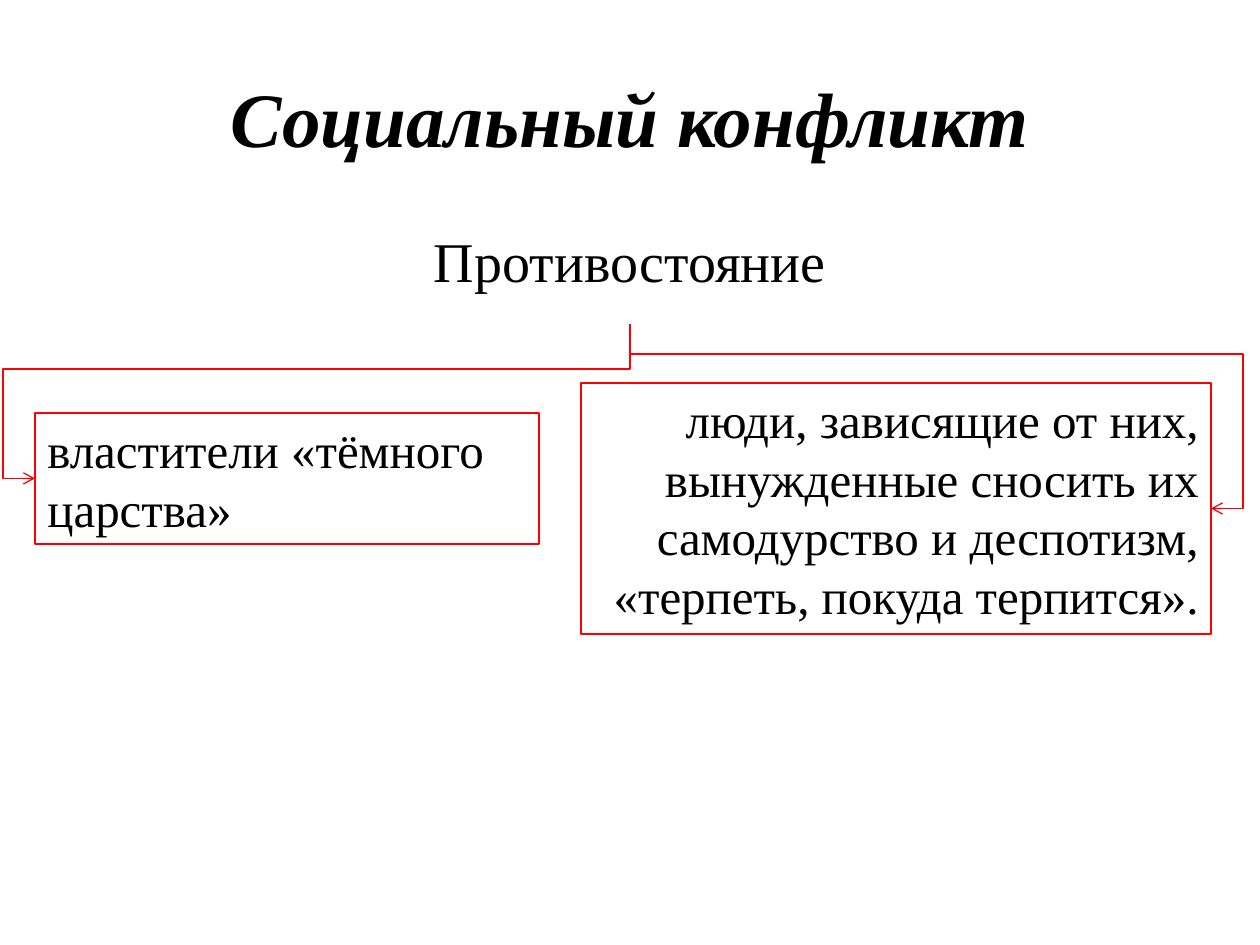
"""Builds a slide on social conflict with two opposed sides."""
from lxml import etree
from pptx import Presentation, util as u
from pptx.dml.color import RGBColor
from pptx.enum import shapes, text
from pptx.oxml.ns import qn

PX = 914400 // 126
FONT = "Times New Roman"
HUES = {"ink": "000000", "edge": "FF0000"}
LEFT, MID, RIGHT = text.PP_ALIGN.LEFT, text.PP_ALIGN.CENTER, text.PP_ALIGN.RIGHT

TITLE = ("Социальный конфликт", (63, 38, 1134, 158), 44, MID)
TOPIC = ("Противостояние", (63, 220, 1134, 104), 32, MID)
SIDES = [
    {"box": ("властители «тёмного царства»", (35, 413, 504, 131), 28, LEFT),
     "site": 1, "drop": 45},
    {"box": ("люди, зависящие от них, вынужденные сносить их самодурство и "
             "деспотизм, «терпеть, покуда терпится».",
             (581, 383, 630, 251), 28, RIGHT),
     "site": 3, "drop": 30},
]
REACH = 32


def hue(name):
    return RGBColor.from_string(HUES[name])


def add_box(slide, item, edge=False):
    words, place, size, align = item
    place = [n * PX for n in place]
    if edge:
        box = slide.shapes.add_shape(shapes.MSO_SHAPE.RECTANGLE, *place)
        box.shadow.inherit = False
        box.fill.background()
        box.line.color.rgb = hue("edge")
        box.line.width = u.Pt(0.75)
    else:
        box = slide.shapes.add_textbox(*place)
    frame = box.text_frame
    frame.text = words
    frame.word_wrap = True
    frame.vertical_anchor = text.MSO_ANCHOR.TOP
    if edge:
        frame.auto_size = text.MSO_AUTO_SIZE.SHAPE_TO_FIT_TEXT
    para = frame.paragraphs[0]
    para.alignment = align
    font = para.runs[0].font
    font.name, font.size = FONT, u.Pt(size)
    font.color.rgb = hue("ink")
    return box


def add_bend(slide, top, side, site, drop):
    line = slide.shapes.add_connector(shapes.MSO_CONNECTOR.ELBOW, 0, 0, 0, 0)
    line.begin_connect(top, 2)
    line.end_connect(side, site)
    wide = abs(line.end_x - line.begin_x)
    high = line.end_y - line.begin_y
    midx = (line.begin_x + line.end_x) // 2
    midy = (line.begin_y + line.end_y) // 2
    props = line._element.spPr
    frame = props.find(qn("a:xfrm"))
    for key in ("flipH", "flipV"):
        frame.attrib.pop(key, None)
    if site == 3:
        frame.set("flipH", "1")
    frame.set("rot", str((90 if site == 1 else 270) * 60000))
    line.left, line.top = midx - high // 2, midy - wide // 2
    line.width, line.height = high, wide

    geom = props.find(qn("a:prstGeom"))
    geom.set("prst", "bentConnector4")
    guides = geom.find(qn("a:avLst"))
    if guides is None:
        guides = etree.SubElement(geom, qn("a:avLst"))
    ratios = (drop * PX / high, 1 + REACH * PX / wide)
    for num, ratio in enumerate(ratios, 1):
        etree.SubElement(guides, qn("a:gd"), name=f"adj{num}",
                         fmla=f"val {round(ratio * 100000)}")
    line.line.color.rgb = hue("edge")
    line.line.width = u.Pt(0.75)
    etree.SubElement(props.find(qn("a:ln")), qn("a:tailEnd"), type="arrow")
    etree.SubElement(props, qn("a:effectLst"))


def main():
    deck = Presentation()
    deck.slide_width, deck.slide_height = u.Inches(10), u.Inches(7.5)
    slide = deck.slides.add_slide(deck.slide_layouts[6])

    title = add_box(slide, TITLE)
    title.text_frame.vertical_anchor = text.MSO_ANCHOR.MIDDLE
    font = title.text_frame.paragraphs[0].runs[0].font
    font.bold = font.italic = True
    topic = add_box(slide, TOPIC)
    topic.text_frame.paragraphs[0].space_before = u.Pt(6.4)

    boxes = [add_box(slide, side["box"], edge=True) for side in SIDES]
    for side, box in zip(SIDES, boxes):
        add_bend(slide, topic, box, side["site"], side["drop"])
    deck.save("out.pptx")


if __name__ == "__main__":
    main()
